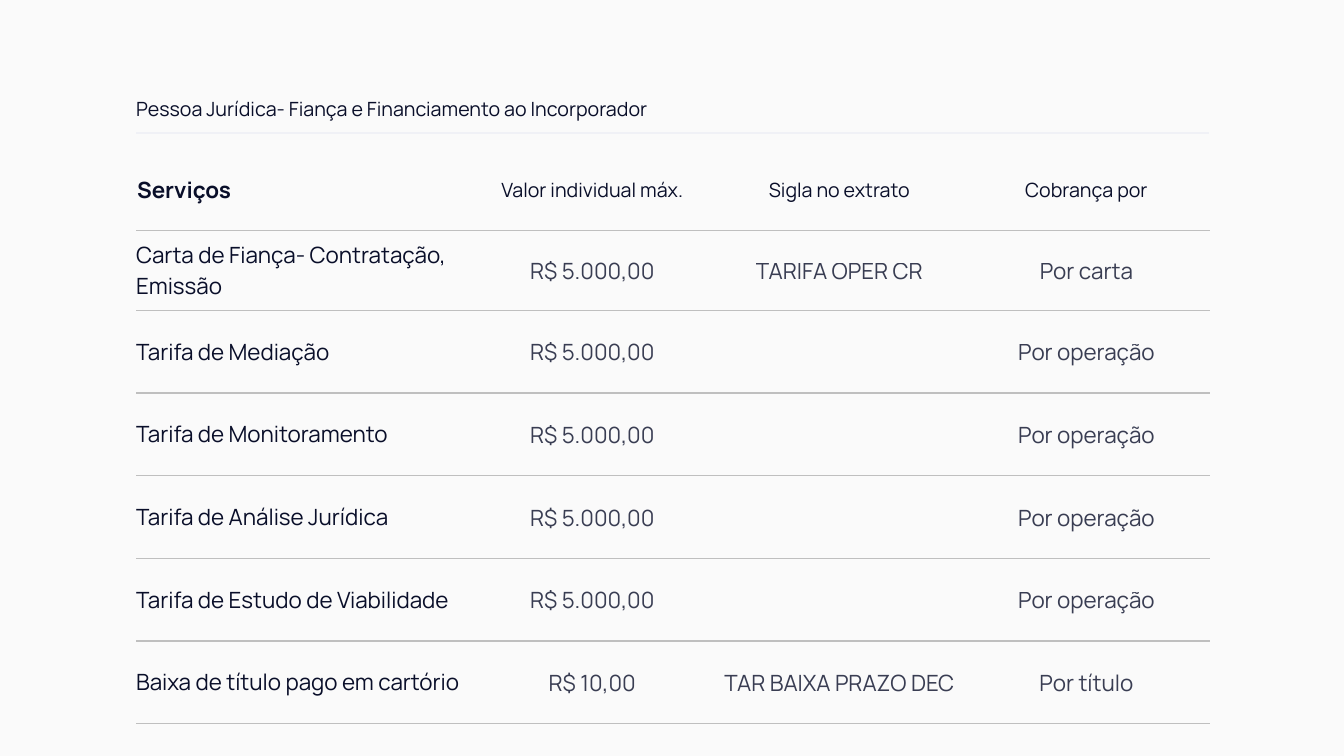
from lxml import etree
from pptx import Presentation
from pptx import util as u
from pptx.dml.color import RGBColor
from pptx.enum import text
from pptx.oxml import ns

NAVY = RGBColor(0x09, 0x0E, 0x29)
BLUE = RGBColor(0x12, 0x26, 0xAA)
GREY = RGBColor(0xBF, 0xBF, 0xBF)
PAPER = RGBColor(0xFA, 0xFA, 0xFA)

MARGIN = 1.35
COLUMNS = [3.3, 2.45, 2.45, 2.45]
ROW = 0.82
ROWS = [ROW, 0.79] + [ROW] * 5
WIDTH = 10.64
NO_STYLE = "{2D5ABB26-0587-4C30-8999-92F81FD0307C}"

SERVICES = [
    ("Serviços", "Valor individual máx.", "Sigla no extrato", "Cobrança por"),
    ("Carta de Fiança- Contratação, Emissão", "R$ 5.000,00", "TARIFA OPER CR", "Por carta"),
    ("Tarifa de Mediação", "R$ 5.000,00", "", "Por operação"),
    ("Tarifa de Monitoramento", "R$ 5.000,00", "", "Por operação"),
    ("Tarifa de Análise Jurídica", "R$ 5.000,00", "", "Por operação"),
    ("Tarifa de Estudo de Viabilidade", "R$ 5.000,00", "", "Por operação"),
    ("Baixa de título pago em cartório", "R$ 10,00", "TAR BAIXA PRAZO DEC", "Por título"),
]


def write(frame, words, size=16, bold=False, align=text.PP_ALIGN.LEFT, opacity=100):
    para = frame.paragraphs[0]
    para.alignment = align
    span = para.add_run()
    span.text = words
    span.font.name = "Manrope"
    span.font.size = u.Pt(size)
    span.font.bold = bold
    span.font.color.rgb = NAVY
    if opacity < 100:
        fade(span._r, opacity)


def fade(element, opacity):
    color = next(element.iter(ns.qn("a:srgbClr")))
    etree.SubElement(color, ns.qn("a:alpha"), val=str(opacity * 1000))


deck = Presentation()
deck.slide_width = u.Inches(13.33)
deck.slide_height = u.Inches(7.5)
page = deck.slides.add_slide(deck.slide_layouts[5])
page.background.fill.solid()
page.background.fill.fore_color.rgb = PAPER

title = page.shapes.title
title.left, title.top = u.Inches(MARGIN), u.Inches(0.96)
title.width, title.height = u.Inches(5.87), u.Inches(0.24)
heading = title.text_frame
heading.margin_left = heading.margin_right = heading.margin_top = heading.margin_bottom = 0
heading.vertical_anchor = text.MSO_ANCHOR.TOP
heading.auto_size = text.MSO_AUTO_SIZE.SHAPE_TO_FIT_TEXT
heading.word_wrap = True
write(heading, "Pessoa Jurídica- Fiança e Financiamento ao Incorporador", size=14)

rule = page.shapes.add_connector(
    1, u.Inches(MARGIN), u.Inches(1.32), u.Inches(MARGIN + WIDTH), u.Inches(1.32))
rule.line.color.rgb = BLUE
rule.line.width = u.Pt(0.25)
fade(rule.line._get_or_add_ln(), 30)
etree.SubElement(rule._element.spPr, ns.qn("a:effectLst"))

holder = page.shapes.add_table(
    len(ROWS), len(COLUMNS), u.Inches(MARGIN), u.Inches(1.47),
    u.Inches(WIDTH), u.Inches(sum(ROWS)))
table = holder.table
table.first_row = table.horz_banding = False
table._tbl.tblPr.find(ns.qn("a:tableStyleId")).text = NO_STYLE
for column, width in zip(table.columns, COLUMNS):
    column.width = u.Inches(width)

for r, service in enumerate(SERVICES):
    table.rows[r].height = u.Inches(ROWS[r])
    for c, words in enumerate(service):
        cell = table.cell(r, c)
        inset = 0 if r and not c else u.Inches(0.01)
        cell.margin_left = cell.margin_right = cell.margin_top = inset
        cell.margin_bottom = 0
        cell.vertical_anchor = text.MSO_ANCHOR.MIDDLE
        cell.fill.background()
        border = etree.Element(ns.qn("a:lnB"), w=str(u.Pt(1)))
        paint = etree.SubElement(border, ns.qn("a:solidFill"))
        etree.SubElement(paint, ns.qn("a:srgbClr"), val=str(GREY))
        cell._tc.get_or_add_tcPr().insert(0, border)
        if words:
            write(cell.text_frame, words,
                  size=14 if c and not r else 16,
                  bold=not r and not c,
                  align=text.PP_ALIGN.CENTER if c else text.PP_ALIGN.LEFT,
                  opacity=80 if r and c else 100)

deck.save("out.pptx")
